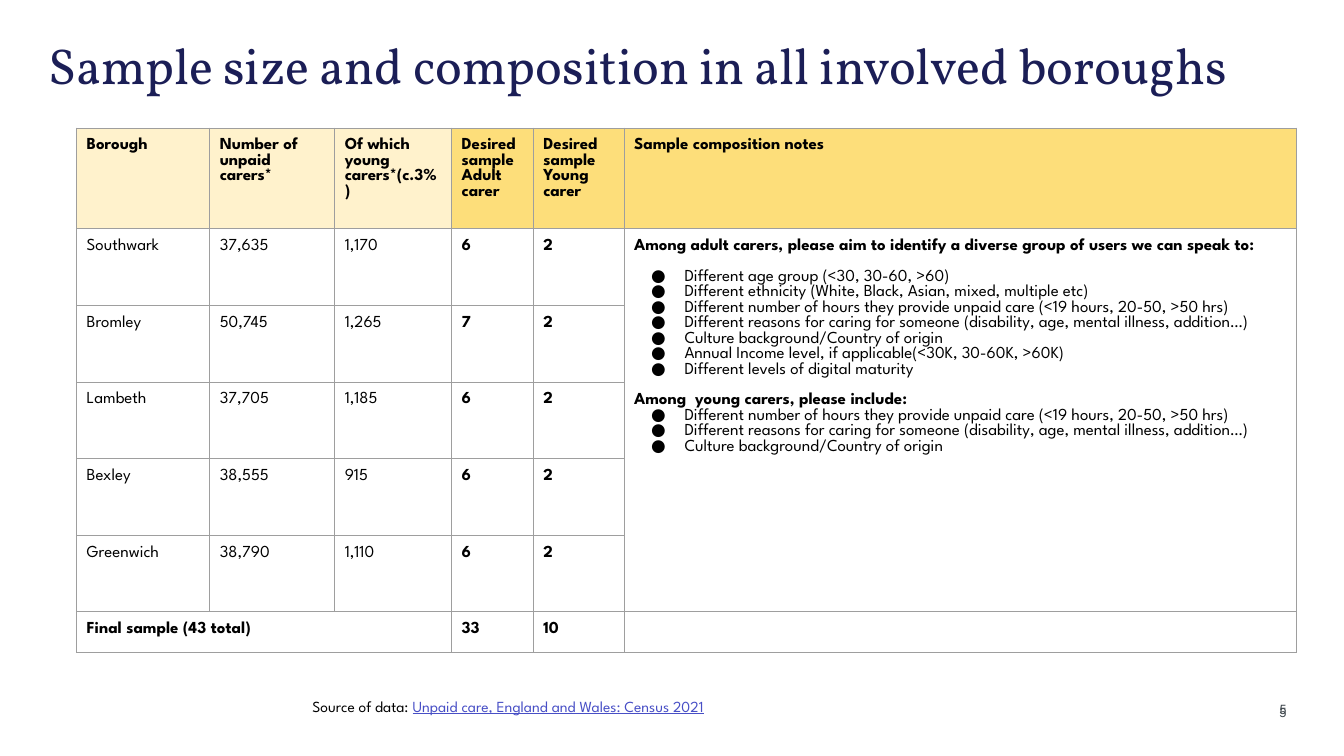
"""Build the slide on sample size and composition by borough."""
from lxml.etree import SubElement
from pptx import Presentation
from pptx.dml.color import RGBColor
from pptx.enum.text import MSO_ANCHOR, MSO_AUTO_SIZE, PP_ALIGN
from pptx.oxml import parse_xml
from pptx.oxml.ns import nsdecls, qn
from pptx.util import Inches, Pt

BODY = "League Spartan"
HEADERS = ["Borough", "Number of unpaid carers*", "Of which young carers*(c.3%)",
           "Desired sample\nAdult carer", "Desired sample\nYoung carer",
           "Sample composition notes"]
BOROUGHS = [
    ["Southwark", "37,635", "1,170", "6", "2"],
    ["Bromley", "50,745", "1,265", "7", "2"],
    ["Lambeth", "37,705", "1,185", "6", "2"],
    ["Bexley", "38,555", "915", "6", "2"],
    ["Greenwich", "38,790", "1,110", "6", "2"],
]
TOTALS = ["Final sample (43 total)", "", "", "33", "10", ""]
HOURS = "Different number of hours they provide unpaid care (<19 hours, 20-50, >50 hrs)"
REASONS = "Different reasons for caring for someone (disability, age, mental illness, addition…)"
CULTURE = "Culture background/Country of origin"
ADULT_HEAD = "Among adult carers, please aim to identify a diverse group of users we can speak to:"
YOUNG_HEAD = "Among  young carers, please include:"
ADULT_NOTES = [
    "Different age group (<30, 30-60, >60)",
    "Different ethnicity (White, Black, Asian, mixed, multiple etc)",
    HOURS, REASONS, CULTURE,
    "Annual Income level, if applicable(<30K, 30-60K, >60K)",
    "Different levels of digital maturity",
]
NOTES = [ADULT_HEAD, *ADULT_NOTES, YOUNG_HEAD, HOURS, REASONS, CULTURE]
SPACED = [ADULT_NOTES[0], YOUNG_HEAD]


def rgb(color):
    return RGBColor.from_string(color)


def add_run(p, text, color="000000", **fmt):
    r = p.add_run()
    r.text = text
    for name, value in {"name": BODY, "size": Pt(12), **fmt}.items():
        setattr(r.font, name, value)
    r.font.color.rgb = rgb(color)


prs = Presentation()
prs.slide_width, prs.slide_height = Inches(13.33), Inches(7.5)
s = prs.slides.add_slide(prs.slide_layouts[5])

title = s.shapes.title
title.left, title.top, title.width, title.height = map(Inches, (0.48, 0.41, 12.59, 0.97))
tf = title.text_frame
tf.word_wrap, tf.auto_size, tf.vertical_anchor = True, MSO_AUTO_SIZE.NONE, MSO_ANCHOR.TOP
tf.margin_left = tf.margin_right = tf.margin_top = tf.margin_bottom = 0
p = tf.paragraphs[0]
p.alignment, p.line_spacing = PP_ALIGN.LEFT, 0.9
add_run(p, "Sample size and composition in all involved boroughs", "1B1E56",
        name="Vollkorn", size=Pt(36))

for left, top, width in [(12.27, 6.9, 0.59), (12.26, 6.93, 0.6)]:
    sp = s.shapes.add_textbox(Inches(left), Inches(top), Inches(width), Inches(0.27))
    tf = sp.text_frame
    tf.word_wrap, tf.vertical_anchor = True, MSO_ANCHOR.MIDDLE
    p = tf.paragraphs[0]
    p.alignment = PP_ALIGN.RIGHT
    add_run(p, "5", "3D454B", size=Pt(10))

widths = [1.32, 1.24, 1.16, 0.81, 0.9, 6.67]
heights = [0.42] + [0.76] * len(BOROUGHS) + [0.3]
table = s.shapes.add_table(len(heights), len(widths), Inches(0.76), Inches(1.27),
                           Inches(sum(widths)), Inches(sum(heights))).table
for column, width in zip(table.columns, widths):
    column.width = Inches(width)
for row, height in zip(table.rows, heights):
    row.height = Inches(height)

last = len(heights) - 1
rows = [HEADERS] + [borough + [""] for borough in BOROUGHS] + [TOTALS]
rows[1][5] = "\n".join(NOTES)
for i, row in enumerate(rows):
    for j, text in enumerate(row):
        cell = table.cell(i, j)
        cell.margin_left = cell.margin_right = Inches(0.1)
        cell.margin_top = cell.margin_bottom = Inches(0.1)
        cell.fill.solid()
        header_fill = "FFF2CC" if j < 3 else "FDDE7A"
        cell.fill.fore_color.rgb = rgb(header_fill if i == 0 else "FFFFFF")
        for k, side in enumerate("LRTB"):
            cell._tc.tcPr.insert(k, parse_xml(
                f'<a:ln{side} {nsdecls("a")} w="9525"><a:solidFill>'
                f'<a:srgbClr val="9E9E9E"/></a:solidFill></a:ln{side}>'))
        tf = cell.text_frame
        if not text:
            end = SubElement(tf.paragraphs[0]._p, qn("a:endParaRPr"), sz="1200")
            SubElement(end, qn("a:latin"), typeface=BODY)
            continue
        for k, line in enumerate(text.split("\n")):
            p = tf.add_paragraph() if k else tf.paragraphs[0]
            bullet = j == 5 and i == 1 and line not in (ADULT_HEAD, YOUNG_HEAD)
            if bullet:
                pPr = p._p.get_or_add_pPr()
                pPr.set("marL", str(Inches(0.5)))
                pPr.set("indent", str(Inches(-0.33)))
                SubElement(pPr, qn("a:buFont"), typeface=BODY)
                SubElement(pPr, qn("a:buChar"), char="●")
            if line in SPACED:
                p.space_before = Pt(11)
            add_run(p, line, bold=i in (0, last) or (j > 2 and not bullet))
table.cell(1, 5).merge(table.cell(last - 1, 5))
table.cell(last, 0).merge(table.cell(last, 2))

sp = s.shapes.add_textbox(Inches(3), Inches(6.83), Inches(7.34), Inches(0.18))
tf = sp.text_frame
tf.word_wrap = True
tf.margin_left = tf.margin_right = tf.margin_top = tf.margin_bottom = Inches(0.1)
p = tf.paragraphs[0]
add_run(p, "Source of data: ", size=Pt(11))
add_run(p, "Unpaid care, England and Wales: Census 2021", "484FC6", size=Pt(11), underline=True)

prs.save("out.pptx")
